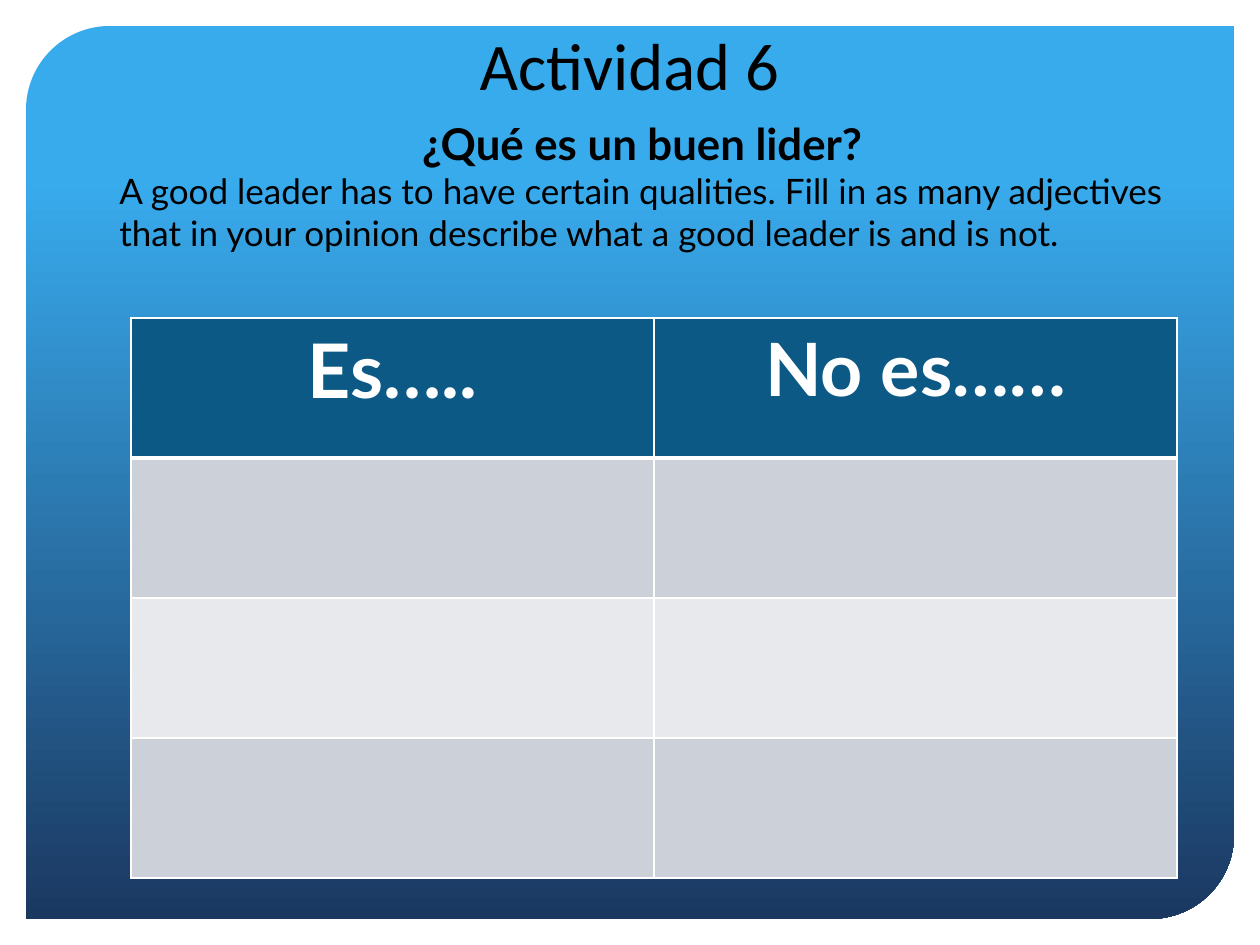
from pptx import Presentation
from pptx.dml.color import RGBColor
from pptx.enum.shapes import MSO_SHAPE
from pptx.enum.text import MSO_ANCHOR, PP_ALIGN
from pptx.oxml import parse_xml
from pptx.oxml.ns import nsdecls
from pptx.util import Emu, Pt

EMU_PER_PX = 914400 / 126
COLORS = {
    "sky": "38ABED",
    "navy": "1B3861",
    "header": "0C5986",
    "dark_band": "CCD1D9",
    "light_band": "E7E9ED",
    "white": "FFFFFF",
    "black": "000000",
}
HEADERS = [("Es…..", 43), ("No es……", 42)]
INSTRUCTIONS = (
    "A good leader has to have certain qualities. Fill in as many adjectives "
    "that in your opinion describe what a good leader is and is not."
)


def px(length):
    return Emu(round(length * EMU_PER_PX))


def color(name):
    return RGBColor.from_string(COLORS[name])


def place(shape, left, top, width, height):
    shape.left, shape.top = px(left), px(top)
    shape.width, shape.height = px(width), px(height)


def write(paragraph, text, size, font="Lato", fill="black", bold=False, align=PP_ALIGN.LEFT):
    paragraph.alignment = align
    run = paragraph.add_run()
    run.text = text
    run.font.name = font
    run.font.size = Pt(size)
    run.font.bold = bold
    run.font.color.rgb = color(fill)


def add_background(slide):
    shape = slide.shapes.add_shape(
        MSO_SHAPE.ROUND_2_DIAG_RECTANGLE, px(26), px(26), px(1208), px(893)
    )
    shape.adjustments[0] = 0.094
    shape.adjustments[1] = 0
    shape.shadow.inherit = False
    shape.line.fill.background()
    shape.fill.gradient()
    shape.fill.gradient_angle = 270
    stops = [(0.17, "sky"), (1, "navy")]
    for stop, (position, name) in zip(shape.fill.gradient_stops, stops):
        stop.position = position
        stop.color.rgb = color(name)
    tree = slide.shapes.element
    tree.remove(shape.element)
    tree.insert(2, shape.element)


def set_title(slide, text):
    title = slide.shapes.title
    place(title, 107, 25, 1045, 85)
    title.text_frame.vertical_anchor = MSO_ANCHOR.BOTTOM
    write(title.text_frame.paragraphs[0], text, 38, font="Calibri", align=PP_ALIGN.CENTER)


def add_instructions(slide):
    box = slide.shapes.add_textbox(px(107), px(111), px(1070), px(193))
    frame = box.text_frame
    frame.word_wrap = True
    write(frame.paragraphs[0], "¿Qué es un buen lider?", 25, bold=True, align=PP_ALIGN.CENTER)
    write(frame.add_paragraph(), INSTRUCTIONS, 20)


def set_borders(cell, **widths):
    properties = cell._tc.get_or_add_tcPr()
    for side in ("L", "R", "T", "B"):
        width = Pt(widths.get(side, 1))
        properties.append(parse_xml(
            f'<a:ln{side} {nsdecls("a")} w="{width}"><a:solidFill>'
            f'<a:srgbClr val="{COLORS["white"]}"/></a:solidFill></a:ln{side}>'
        ))


def add_adjective_table(slide):
    bands = ["header", "dark_band", "light_band", "dark_band"]
    table = slide.shapes.add_table(
        len(bands), len(HEADERS), px(131), px(318), px(1046), px(560)
    ).table
    for row, band in enumerate(bands):
        for column in range(len(HEADERS)):
            cell = table.cell(row, column)
            set_borders(cell, T=3 if row == 1 else 1, B=3 if row == 0 else 1)
            cell.fill.solid()
            cell.fill.fore_color.rgb = color(band)
    for column, (text, size) in enumerate(HEADERS):
        paragraph = table.cell(0, column).text_frame.paragraphs[0]
        write(paragraph, text, size, fill="white", bold=True, align=PP_ALIGN.CENTER)


def main():
    presentation = Presentation()
    presentation.slide_width, presentation.slide_height = px(1260), px(945)
    slide = presentation.slides.add_slide(presentation.slide_layouts[5])
    add_background(slide)
    set_title(slide, "Actividad 6")
    add_adjective_table(slide)
    add_instructions(slide)
    presentation.save("out.pptx")


if __name__ == "__main__":
    main()
